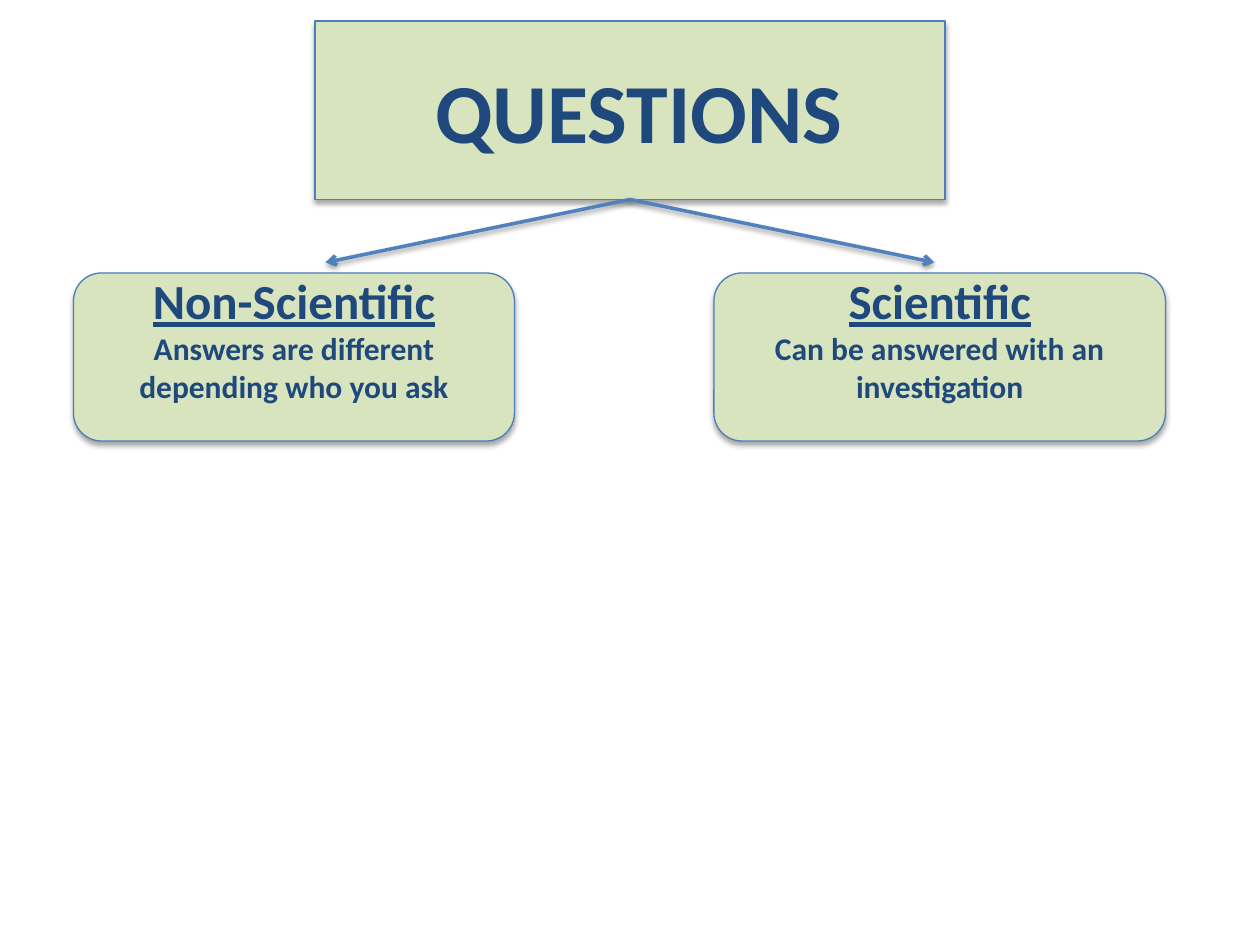
from dataclasses import dataclass

from lxml import etree
from pptx import Presentation
from pptx.dml.color import RGBColor
from pptx.enum.shapes import MSO_CONNECTOR, MSO_SHAPE
from pptx.enum.text import MSO_ANCHOR, MSO_AUTO_SIZE, PP_ALIGN
from pptx.oxml.ns import qn
from pptx.shapes.autoshape import Shape
from pptx.shapes.connector import Connector
from pptx.slide import Slide
from pptx.util import Pt

ROUNDED = MSO_SHAPE.ROUNDED_RECTANGLE
STRAIGHT = MSO_CONNECTOR.STRAIGHT
MIDDLE = MSO_ANCHOR.MIDDLE
NO_AUTOFIT = MSO_AUTO_SIZE.NONE
CENTER = PP_ALIGN.CENTER
BOTTOM_SITE = 2

FONT = "Calibri"
COLORS = {
    "box": "D7E4BD",
    "border": "4B7EBC",
    "arrow": "4F81BD",
    "text": "1F497D",
    "shadow": "000000",
}


@dataclass(frozen=True)
class Line:
    text: str
    size: float
    underline: bool = False


@dataclass(frozen=True)
class Category:
    left: float
    width: float
    arrow_end: float
    heading: str
    description: str


CATEGORIES = [
    Category(42, 252, 186, "Non-Scientific", "Answers are different depending who you ask"),
    Category(408, 258, 534, "Scientific", "Can be answered with an investigation"),
]
CATEGORY_TOP, CATEGORY_HEIGHT = 156, 96
ARROW_END_TOP = 150


def color(name: str) -> RGBColor:
    return RGBColor.from_string(COLORS[name])


def add_shadow(item: Shape | Connector, opacity: int, distance: float) -> None:
    properties = item._element.spPr
    effects = properties.find(qn("a:effectLst"))
    if effects is None:
        effects = etree.SubElement(properties, qn("a:effectLst"))
    shadow = etree.SubElement(
        effects, qn("a:outerShdw"),
        blurRad=str(Pt(3.1)), dist=str(Pt(distance)), dir="5400000", rotWithShape="0",
    )
    tint = etree.SubElement(shadow, qn("a:srgbClr"), val=COLORS["shadow"])
    etree.SubElement(tint, qn("a:alpha"), val=str(opacity * 1000))


def style_box(box: Shape) -> None:
    box.fill.solid()
    box.fill.fore_color.rgb = color("box")
    box.line.color.rgb = color("border")
    box.line.width = Pt(0.75)
    box.shadow.inherit = False
    add_shadow(box, 35, 1.8)


def write_lines(box: Shape, lines: list[Line]) -> None:
    frame = box.text_frame
    frame.word_wrap = True
    frame.auto_size = NO_AUTOFIT
    frame.vertical_anchor = MIDDLE
    for index, line in enumerate(lines):
        paragraph = frame.add_paragraph() if index else frame.paragraphs[0]
        paragraph.alignment = CENTER
        run = paragraph.add_run()
        run.text = line.text
        run.font.name = FONT
        run.font.size = Pt(line.size)
        run.font.bold = True
        run.font.underline = line.underline
        run.font.color.rgb = color("text")


def place_title(slide: Slide) -> Shape:
    title = slide.shapes.title
    title.left, title.top, title.width, title.height = Pt(180), Pt(12), Pt(360), Pt(102)
    outline = etree.SubElement(title._element.spPr, qn("a:prstGeom"), prst="roundRect")
    etree.SubElement(outline, qn("a:avLst"))
    style_box(title)
    write_lines(title, [Line("QUESTIONS", 48)])
    title.text_frame.margin_left = Pt(17.2)
    return title


def add_category(slide: Slide, category: Category) -> None:
    box = slide.shapes.add_shape(
        ROUNDED, Pt(category.left), Pt(CATEGORY_TOP), Pt(category.width), Pt(CATEGORY_HEIGHT)
    )
    style_box(box)
    write_lines(box, [Line(category.heading, 28, True), Line(category.description, 18)])
    box.text_frame.margin_top = Pt(0)
    box.text_frame.margin_bottom = Pt(22)


def add_arrow(slide: Slide, title: Shape, category: Category) -> None:
    arrow = slide.shapes.add_connector(
        STRAIGHT, Pt(360), Pt(114), Pt(category.arrow_end), Pt(ARROW_END_TOP)
    )
    arrow.begin_connect(title, BOTTOM_SITE)
    arrow.line.color.rgb = color("arrow")
    arrow.line.width = Pt(2)
    stroke = arrow._element.spPr.find(qn("a:ln"))
    etree.SubElement(stroke, qn("a:tailEnd"), type="arrow")
    add_shadow(arrow, 38, 1.6)


def main() -> None:
    presentation = Presentation()
    presentation.slide_width, presentation.slide_height = Pt(720), Pt(540)
    slide = presentation.slides.add_slide(presentation.slide_layouts[5])
    title = place_title(slide)
    for category in CATEGORIES:
        add_category(slide, category)
    for category in CATEGORIES:
        add_arrow(slide, title, category)
    presentation.save("out.pptx")


if __name__ == "__main__":
    main()
